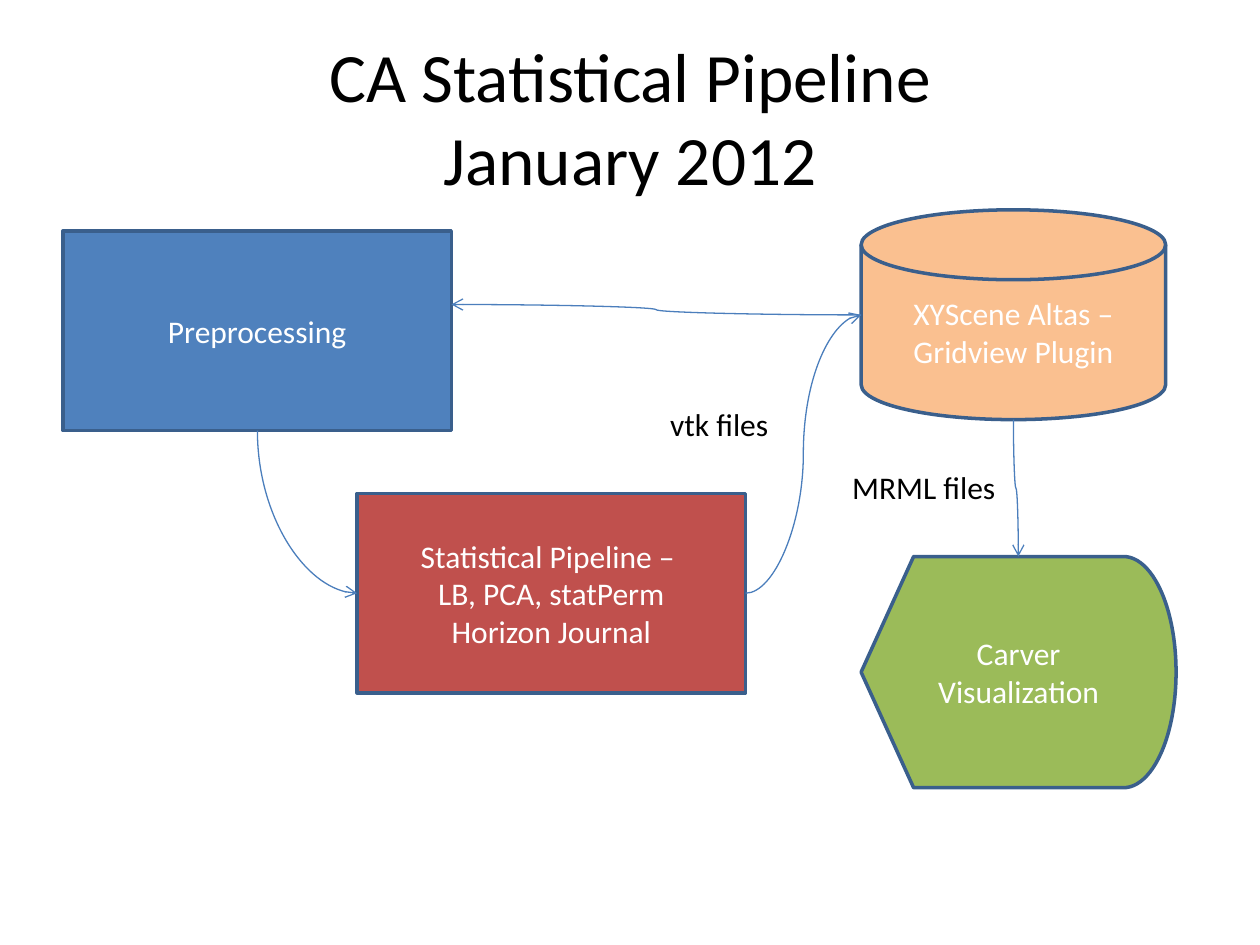
"""Build the statistical pipeline flow slide."""
from dataclasses import dataclass

from lxml.etree import SubElement
from pptx import Presentation
from pptx.dml.color import RGBColor
from pptx.enum.shapes import MSO_CONNECTOR, MSO_SHAPE as Preset
from pptx.enum.text import MSO_ANCHOR as Anchor, MSO_AUTO_SIZE as AutoSize, PP_ALIGN as Align
from pptx.oxml.ns import qn
from pptx.slide import Slide
from pptx.text.text import TextFrame
from pptx.util import Cm, Pt

BLACK = RGBColor(0x00, 0x00, 0x00)
WHITE = RGBColor(0xFF, 0xFF, 0xFF)
BLUE = RGBColor(0x4F, 0x81, 0xBD)
RED = RGBColor(0xC0, 0x50, 0x4D)
ORANGE = RGBColor(0xFA, 0xC0, 0x90)
GREEN = RGBColor(0x9B, 0xBB, 0x59)
OUTLINE = RGBColor(0x3A, 0x5F, 0x8C)
ARROW = RGBColor(0x4B, 0x7E, 0xBC)
FONT = "Calibri"


@dataclass(frozen=True)
class Step:
    text: str
    preset: Preset
    fill: RGBColor
    left: float
    top: float
    width: float
    height: float


@dataclass(frozen=True)
class Arrow:
    start: tuple[float, float]
    end: tuple[float, float]
    starts_down: bool = False
    geometry: str = "curvedConnector3"


@dataclass(frozen=True)
class Label:
    text: str
    left: float
    top: float
    width: float
    align: Align


STEPS = [
    Step("Preprocessing", Preset.RECTANGLE, BLUE, 1.27, 4.66, 7.83, 4.02),
    Step("Statistical Pipeline – \nLB, PCA, statPerm\nHorizon Journal",
         Preset.RECTANGLE, RED, 7.2, 9.95, 7.83, 4.02),
    Step("XYScene Altas – Gridview Plugin",
         Preset.FLOWCHART_MAGNETIC_DISK, ORANGE, 17.36, 4.23, 6.14, 4.23),
    Step("Carver Visualization", Preset.FLOWCHART_DISPLAY, GREEN, 17.36, 11.22, 6.35, 4.66),
]
ARROWS = [
    Arrow((5.19, 8.68), (7.2, 11.96), True, "curvedConnector2"),
    Arrow((17.36, 6.35), (9.1, 6.14)),
    Arrow((20.43, 8.46), (20.53, 11.22), True),
    Arrow((15.03, 11.96), (17.36, 6.35)),
]
LABELS = [
    Label("vtk files", 12.91, 8.04, 3.18, Align.CENTER),
    Label("MRML files", 16.93, 9.31, 3.6, Align.LEFT),
]


def format_text(frame: TextFrame, size: float, color: RGBColor, align: Align) -> None:
    """Apply one font and alignment to every paragraph."""
    frame.word_wrap = True
    for paragraph in frame.paragraphs:
        paragraph.alignment = align
        paragraph.font.name = FONT
        paragraph.font.size = Pt(size)
        paragraph.font.color.rgb = color


def add_title(slide: Slide, text: str) -> None:
    """Fill and place the title placeholder."""
    title = slide.shapes.title
    title.left, title.top, title.width, title.height = Cm(1.27), Cm(0.76), Cm(22.86), Cm(3.18)
    title.text_frame.text = text
    title.text_frame.vertical_anchor = Anchor.MIDDLE
    format_text(title.text_frame, 39.6, BLACK, Align.CENTER)


def add_step(slide: Slide, step: Step) -> None:
    """Draw one filled pipeline step."""
    shape = slide.shapes.add_shape(
        step.preset, Cm(step.left), Cm(step.top), Cm(step.width), Cm(step.height))
    shape.shadow.inherit = False
    shape.fill.solid()
    shape.fill.fore_color.rgb = step.fill
    shape.line.color.rgb = OUTLINE
    shape.line.width = Pt(2)
    shape.text_frame.text = step.text
    shape.text_frame.vertical_anchor = Anchor.MIDDLE
    format_text(shape.text_frame, 18, WHITE, Align.CENTER)


def add_arrow(slide: Slide, arrow: Arrow) -> None:
    """Draw one curved arrow, turned when it leaves downwards."""
    (x1, y1), (x2, y2) = arrow.start, arrow.end
    connector = slide.shapes.add_connector(
        MSO_CONNECTOR.CURVE, Cm(x1), Cm(y1), Cm(x2), Cm(y2))
    properties = connector._element.spPr
    properties.find(qn("a:prstGeom")).set("prst", arrow.geometry)
    if arrow.starts_down:
        width, height = y2 - y1, x2 - x1
        connector.left = Cm((x1 + x2 - width) / 2)
        connector.top = Cm((y1 + y2 - height) / 2)
        connector.width, connector.height = Cm(width), Cm(height)
        transform = properties.find(qn("a:xfrm"))
        transform.set("rot", str(270 * 60000))
        transform.set("flipH", "1")
    connector.line.color.rgb = ARROW
    connector.line.width = Pt(0.75)
    SubElement(properties.find(qn("a:ln")), qn("a:tailEnd"), type="arrow")
    SubElement(properties, qn("a:effectLst"))


def add_label(slide: Slide, label: Label) -> None:
    """Write one file-type label beside its arrow."""
    box = slide.shapes.add_textbox(Cm(label.left), Cm(label.top), Cm(label.width), Cm(1.03))
    box.text_frame.text = label.text
    box.text_frame.auto_size = AutoSize.SHAPE_TO_FIT_TEXT
    format_text(box.text_frame, 18, BLACK, label.align)


def main() -> None:
    """Assemble and save the presentation."""
    presentation = Presentation()
    presentation.slide_width, presentation.slide_height = Cm(25.4), Cm(19.05)
    slide = presentation.slides.add_slide(presentation.slide_layouts[5])
    add_title(slide, "CA Statistical Pipeline\vJanuary 2012")
    for step in STEPS:
        add_step(slide, step)
    for arrow in ARROWS:
        add_arrow(slide, arrow)
    for label in LABELS:
        add_label(slide, label)
    presentation.save("out.pptx")


if __name__ == "__main__":
    main()
